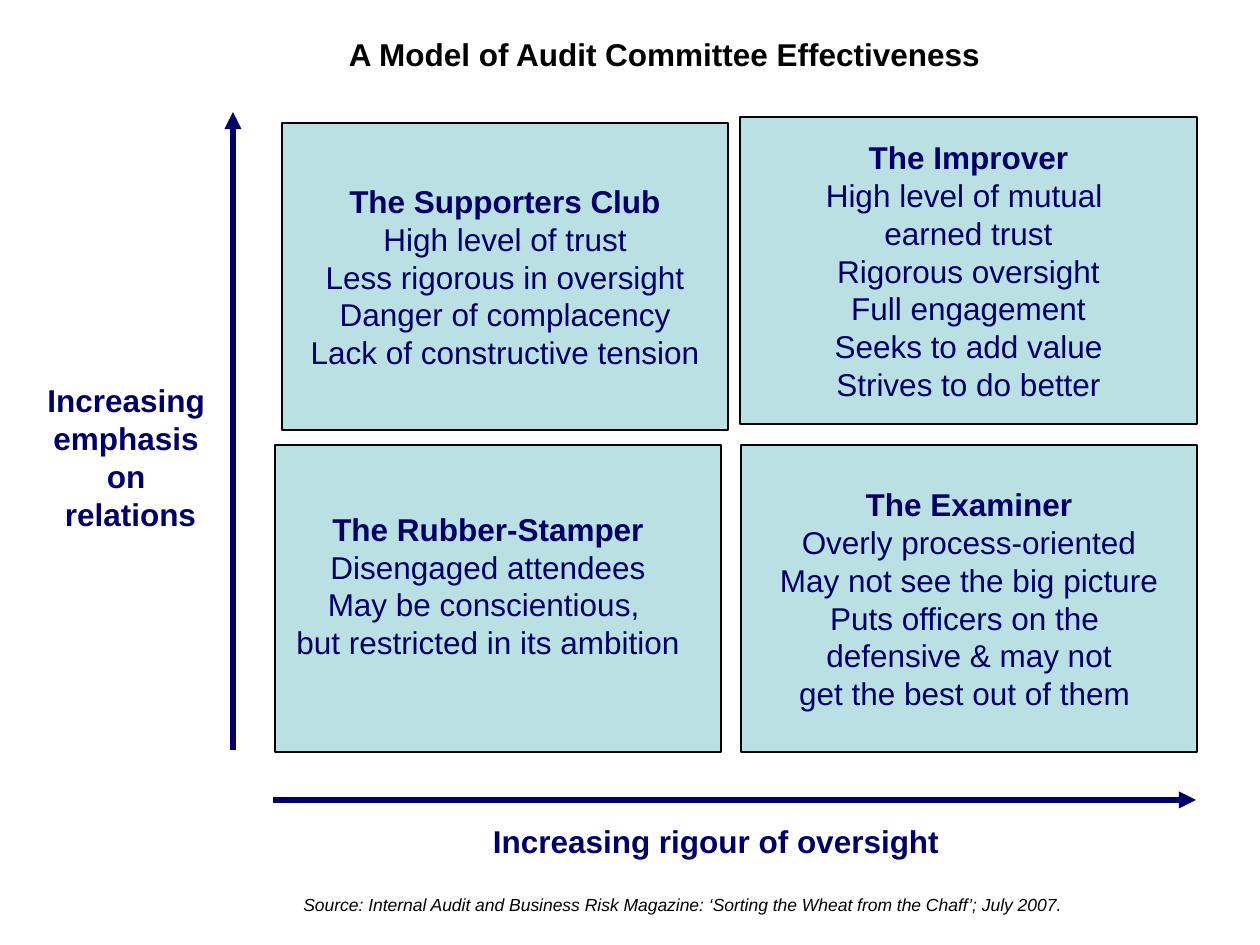
"""Build the audit committee effectiveness matrix slide."""
from lxml.etree import SubElement
from pptx import Presentation
from pptx.dml.color import RGBColor
from pptx.enum.shapes import MSO_CONNECTOR, MSO_SHAPE
from pptx.enum.text import MSO_ANCHOR, MSO_AUTO_SIZE, PP_ALIGN
from pptx.oxml.ns import qn
from pptx.util import Inches, Pt

NAVY = RGBColor(0x00, 0x00, 0x66)
PALE = RGBColor(0xBB, 0xE0, 0xE3)
BLACK = RGBColor(0, 0, 0)
PX = 914400 / 126


def px(*values):
    return [round(v * PX) for v in values]


def write(sp, lines, anchor=MSO_ANCHOR.TOP, align=PP_ALIGN.CENTER, heading=False, **fmt):
    tf = sp.text_frame
    tf.auto_size = MSO_AUTO_SIZE.NONE
    tf.word_wrap = False
    tf.vertical_anchor = anchor
    for i, line in enumerate(lines):
        p = tf.paragraphs[0] if i == 0 else tf.add_paragraph()
        p.alignment = align
        r = p.add_run()
        r.text = line
        look = {"name": "Arial", "size": Pt(18), "bold": not heading or i == 0, **fmt}
        color = look.pop("color", NAVY)
        for key, value in look.items():
            setattr(r.font, key, value)
        r.font.color.rgb = color


prs = Presentation()
prs.slide_width, prs.slide_height = Inches(10), Inches(7.5)
s = prs.slides.add_slide(prs.slide_layouts[5])

title = s.shapes.title
title.left, title.top, title.width, title.height = px(333, 29, 663, 50)
write(title, ["A Model of Audit Committee Effectiveness"], color=BLACK)

quadrants = [
    ((275, 445, 446), []),
    ((282, 123, 446), ["The Supporters Club", "High level of trust", "Less rigorous in oversight",
                       "Danger of complacency", "Lack of constructive tension"]),
    ((740, 117, 457), ["The Improver", "High level of mutual ", "earned trust", "Rigorous oversight",
                       "Full engagement", "Seeks to add value", "Strives to do better"]),
    ((741, 445, 456), ["The Examiner", "Overly process-oriented", "May not see the big picture",
                       "Puts officers on the ", "defensive & may not", "get the best out of them "]),
]
for box, lines in quadrants:
    sp = s.shapes.add_shape(MSO_SHAPE.RECTANGLE, *px(*box, 307))
    sp.shadow.inherit = False
    sp.fill.solid()
    sp.fill.fore_color.rgb = PALE
    sp.line.color.rgb = BLACK
    sp.line.width = Pt(0.75)
    write(sp, lines, MSO_ANCHOR.MIDDLE, heading=True)

for ends in [(273, 800, 1196, 800), (233, 750, 233, 112)]:
    axis = s.shapes.add_connector(MSO_CONNECTOR.STRAIGHT, *px(*ends))
    axis.line.color.rgb = NAVY
    axis.line.width = Pt(3.25)
    SubElement(axis.line._get_or_add_ln(), qn("a:tailEnd"), type="triangle")
    SubElement(axis._element.spPr, qn("a:effectLst"))

labels = [
    ((282, 503, 412, 165), ["The Rubber-Stamper", "Disengaged attendees", "May be conscientious, ",
                            "but restricted in its ambition"],
     {"anchor": MSO_ANCHOR.MIDDLE, "heading": True}),
    ((478, 816, 476, 50), ["Increasing rigour of oversight"], {}),
    ((34, 375, 193, 165), ["Increasing ", "emphasis ", "on ", "relations"], {}),
    ((291, 888, 794, 34), ["Source: Internal Audit and Business Risk Magazine: "
                           "‘Sorting the Wheat from the Chaff’; July 2007."],
     {"align": PP_ALIGN.LEFT, "size": Pt(10), "bold": False, "italic": True, "color": BLACK}),
]
for box, lines, fmt in labels:
    write(s.shapes.add_textbox(*px(*box)), lines, **fmt)

prs.save("out.pptx")
